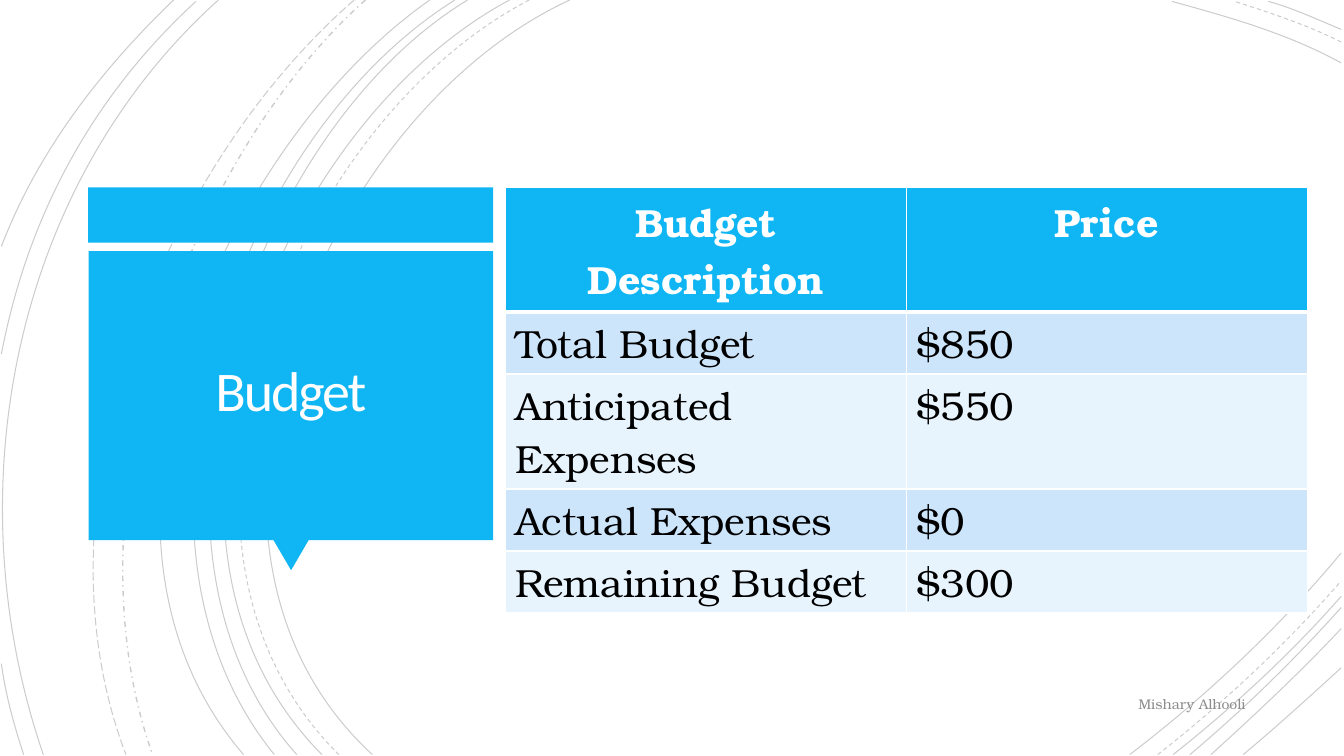
from lxml import etree
from pptx import Presentation
from pptx import util as u
from pptx.dml.color import RGBColor
from pptx.enum import dml, shapes, text
from pptx.oxml import ns

COLORS = {"blue": "10B6F4", "band": "CCE5FB", "pale": "E7F3FD", "white": "FFFFFF",
          "title": "FFFEFF", "black": "000000", "grey": "8C8C8C"}
SERIF = "TeX Gyre Bonum"
SANS = "Calibri"

# Each arc: start, two control points, end
SOLID_ARCS = [
    (407, 0, 227, 83, 103, 389, 266, 539),
    (958, 45, 920, 24, 877, 12, 837, 1),
    (807, 539, 862, 497, 914, 448, 958, 395),
    (364, 0, 194, 91, 79, 387, 230, 539),
    (958, 21, 941, 14, 924, 6, 906, 1),
    (838, 539, 881, 505, 922, 467, 958, 426),
    (334, 0, 176, 96, 79, 390, 212, 539),
    (850, 539, 888, 507, 924, 472, 958, 434),
    (325, 0, 166, 99, 70, 384, 196, 539),
    (865, 539, 897, 510, 929, 480, 958, 449),
    (307, 0, 156, 106, 38, 381, 174, 539),
    (888, 539, 912, 519, 935, 498, 958, 477),
    (156, 0, 8, 133, -33, 353, 31, 539),
    (140, 1, 66, 69, 20, 154, 1, 253),
    (1, 474, 4, 496, 10, 518, 17, 539),
    (124, 0, 72, 50, 27, 108, 1, 176),
]
DASHED_ARCS = [
    (378, 0, 205, 90, 89, 387, 242, 539),
    (958, 30, 934, 18, 907, 9, 882, 1),
    (827, 539, 873, 503, 918, 461, 958, 415),
]
DASH_DOT_ARC = (261, 0, 127, 120, 47, 366, 109, 539)
LONG_DASH_ARC = (253, 0, 113, 122, 21, 359, 90, 539)

BUDGET = [
    ("Budget Description", "Price"),
    ("Total Budget", "$850"),
    ("Anticipated Expenses", "$550"),
    ("Actual Expenses", "$0"),
    ("Remaining Budget", "$300"),
]
ROW_HEIGHTS = (88.9, 44.3, 82.1, 44.3, 44.3)


def rgb(name):
    return RGBColor.from_string(COLORS[name])


def points(*lengths):
    return [u.Pt(length) for length in lengths]


class SlideBuilder:
    def __init__(self, page):
        self.page = page

    def arc(self, curve, dash=dml.MSO_LINE.SOLID, width=0.75):
        """Draw one cubic curve as a faint open line."""
        pairs = list(zip(curve[::2], curve[1::2]))
        builder = self.page.shapes.build_freeform(*pairs[0], scale=u.Pt(1))
        builder.add_line_segments(pairs[1:], close=False)
        shape = builder.convert_to_shape()
        segments = list(shape.element.iter(ns.qn("a:lnTo")))
        bezier = etree.SubElement(segments[0].getparent(), ns.qn("a:cubicBezTo"))
        for segment in segments:
            bezier.append(segment[0])
            segment.getparent().remove(segment)
        shape.shadow.inherit = False
        shape.fill.background()
        shape.line.color.rgb = rgb("black")
        shape.line.width = u.Pt(width)
        shape.line.dash_style = dash
        color = shape.line._ln.find(".//" + ns.qn("a:srgbClr"))
        etree.SubElement(color, ns.qn("a:alpha"), val="20000")

    def block(self, kind, frame, rotation=0):
        shape = self.page.shapes.add_shape(kind, *points(*frame))
        shape.shadow.inherit = False
        shape.fill.solid()
        shape.fill.fore_color.rgb = rgb("blue")
        shape.line.fill.background()
        shape.rotation = rotation

    def style(self, para, font, size, color, align, bold=False):
        para.alignment = align
        for span in para.runs:
            span.font.name = font
            span.font.size = u.Pt(size)
            span.font.bold = bold
            span.font.color.rgb = rgb(color)

    def label(self, words, frame, font, size, color, align):
        box = self.page.shapes.add_textbox(*points(*frame))
        box.text_frame.text = words
        box.text_frame.word_wrap = True
        box.text_frame.vertical_anchor = text.MSO_ANCHOR.MIDDLE
        self.style(box.text_frame.paragraphs[0], font, size, color, align)
        return box.text_frame

    def title(self, words, frame):
        body = self.label(words, frame, SANS, 40, "title", text.PP_ALIGN.CENTER)
        body.margin_left = body.margin_right = u.Pt(18)
        body.margin_top = body.margin_bottom = u.Pt(18)
        para = body.paragraphs[0]
        para.line_spacing = 0.85
        para.runs[0].font._element.set("spc", "-150")

    def borders(self, cell, bottom):
        properties = cell._tc.get_or_add_tcPr()
        for side, width in (("L", 1), ("R", 1), ("T", 1), ("B", bottom)):
            line = etree.SubElement(properties, ns.qn("a:ln" + side), w=str(u.Pt(width)))
            fill = etree.SubElement(line, ns.qn("a:solidFill"))
            etree.SubElement(fill, ns.qn("a:srgbClr"), val=COLORS["white"])

    def table(self, rows, heights, left, top, width):
        frame = points(left, top, width, sum(heights))
        grid = self.page.shapes.add_table(len(rows), len(rows[0]), *frame).table
        for r, row in enumerate(rows):
            grid.rows[r].height = u.Pt(heights[r])
            header = r == 0
            fill = "blue" if header else ("pale", "band")[r % 2]
            for c, words in enumerate(row):
                cell = grid.cell(r, c)
                cell.text_frame.text = words
                self.borders(cell, 3 if header else 1)
                cell.fill.solid()
                cell.fill.fore_color.rgb = rgb(fill)
                self.style(cell.text_frame.paragraphs[0], SERIF, 28,
                           "white" if header else "black",
                           text.PP_ALIGN.CENTER if header else text.PP_ALIGN.LEFT, header)


def main():
    deck = Presentation()
    deck.slide_width, deck.slide_height = points(960, 540)
    builder = SlideBuilder(deck.slides.add_slide(deck.slide_layouts[6]))

    for curve in SOLID_ARCS:
        builder.arc(curve)
    for curve in DASHED_ARCS:
        builder.arc(curve, dml.MSO_LINE.DASH)
    builder.arc(DASH_DOT_ARC, dml.MSO_LINE.DASH_DOT, 1)
    builder.arc(LONG_DASH_ARC, dml.MSO_LINE.LONG_DASH)

    builder.block(shapes.MSO_SHAPE.RECTANGLE, (63, 133.8, 289.2, 39.6))
    builder.block(shapes.MSO_SHAPE.ISOSCELES_TRIANGLE, (195.3, 385.7, 25.2, 21.6), 180)
    builder.block(shapes.MSO_SHAPE.RECTANGLE, (63.4, 179.3, 288.8, 206.5))
    builder.title("Budget", (69.8, 185, 276, 193.7))
    builder.table(BUDGET, ROW_HEIGHTS, 361, 134, 573)
    builder.label("Mishary Alhooli", (63.2, 490.3, 833.6, 25.2), SERIF, 10, "grey",
                  text.PP_ALIGN.RIGHT)
    deck.save("out.pptx")


if __name__ == "__main__":
    main()
